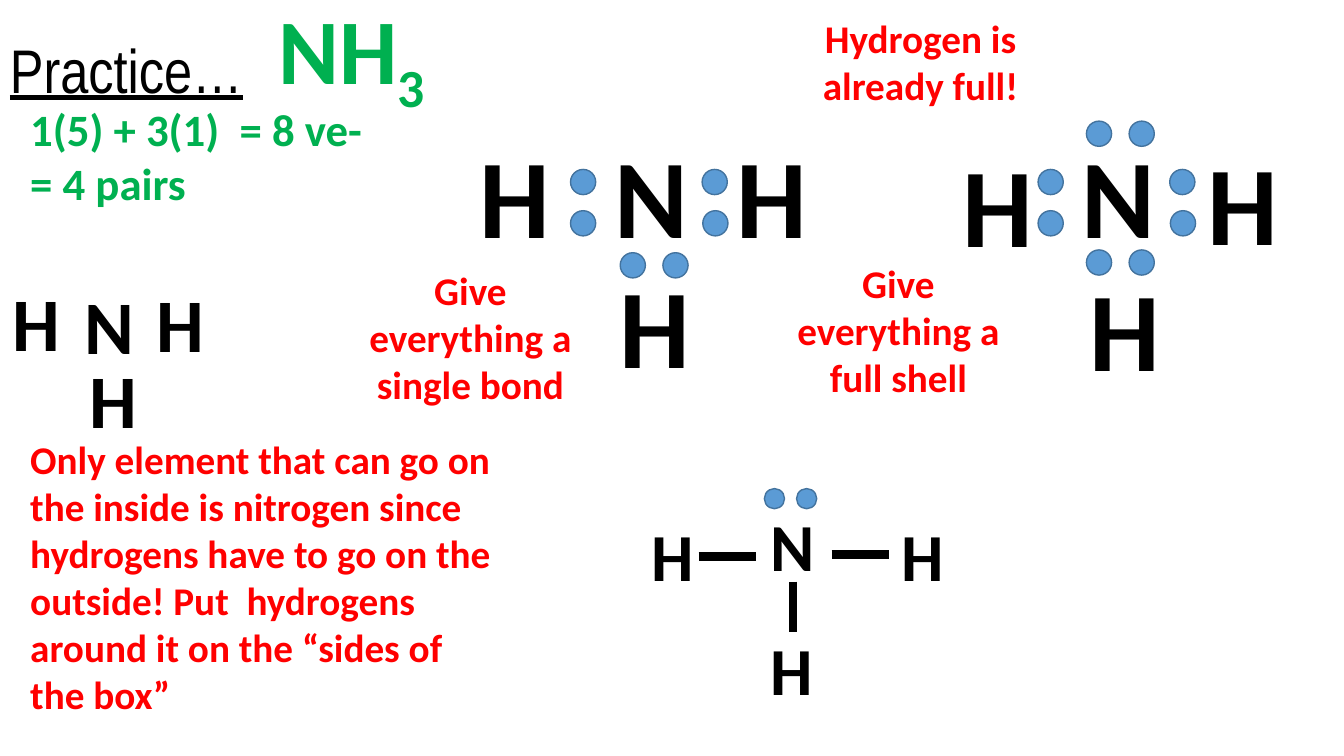
from pptx import Presentation, util as u
from pptx.dml.color import RGBColor
from pptx.enum import shapes, text
from pptx.oxml.ns import qn
from lxml import etree

COLOURS = {"black": "000000", "green": "00B050", "red": "FF0000",
           "dot": "5B9BD5", "dot_edge": "43739E"}

# Each molecule: font size, box height, then (symbol, left, top)
MOLECULES = [
    (54, 72.7, [("H", 1.5, 193.5), ("N", 53.5, 196), ("H", 105, 194.5), ("H", 57, 248.5)]),
    (80, 104.5, [("H", 335.5, 87), ("N", 431.5, 87), ("H", 519, 87), ("H", 435.5, 180)]),
    (80, 104.5, [("H", 680.5, 93.5), ("N", 765.5, 87), ("H", 855.5, 91.5), ("H", 771, 182)]),
    (48, 65.5, [("H", 458, 363.5), ("N", 543.5, 356.5), ("H", 637, 363.5), ("H", 543.5, 445)]),
]
# Electron pairs: left, top, step across, step down, diameter
PAIRS = [
    (407.5, 121, 0, 29.5, 18), (501.5, 121, 0.5, 29.5, 18), (443, 180.5, 30.5, 0, 18),
    (741.5, 121, 0, 29.5, 18), (835.5, 121, 0.5, 29.5, 18),
    (776, 86.5, 30.5, 0, 18), (776, 178.5, 30.5, 0, 18),
    (546, 349, 23, 0, 14.4),
]
BONDS = [(499, 397.5, 540, 397.5), (594, 396, 635, 396), (566.5, 415.5, 566.5, 451.5)]
# Red notes: wording, left, top, width, height, alignment
NOTES = [
    ("Only element that can go on the inside is nitrogen since hydrogens have to go "
     "on the outside! Put  hydrogens around it on the “sides of the box”",
     14.5, 307.5, 350.5, 211, "LEFT"),
    ("Give everything a single bond", 253.5, 186.5, 165, 108.5, "CENTER"),
    ("Give everything a full shell", 545, 181.5, 193.5, 108.5, "CENTER"),
    ("Hydrogen is already full!", 574, 6.5, 167, 75, "CENTER"),
]


def rgb(name):
    return RGBColor.from_string(COLOURS[name])


def add_text(page, wording, left, top, width, height, size, colour,
             align="LEFT", **font):
    box = page.shapes.add_textbox(*map(u.Pt, (left, top, width, height)))
    box.text_frame.word_wrap = True
    box.text_frame.auto_size = text.MSO_AUTO_SIZE.SHAPE_TO_FIT_TEXT
    para = box.text_frame.paragraphs[0]
    para.text = wording
    para.alignment = getattr(text.PP_ALIGN, align)
    for span in para.runs:
        style_span(span, size, colour, **font)
    return box


def style_span(span, size, colour, **font):
    values = {"name": "Calibri", "bold": True, "size": u.Pt(size), **font}
    for key, value in values.items():
        setattr(span.font, key, value)
    span.font.color.rgb = rgb(colour)


def add_title(page):
    box = add_text(page, "Practice…", 0, 0, 894, 104.5, 44, "black",
                   name="Arial Narrow", bold=False, underline=True)
    frame = box.text_frame
    frame.auto_size = text.MSO_AUTO_SIZE.NONE
    frame.vertical_anchor = text.MSO_ANCHOR.MIDDLE
    frame.paragraphs[0].line_spacing = 0.9


def add_formula(page):
    box = add_text(page, "NH", 192, -9.5, 251.5, 87, 66, "green")
    span = box.text_frame.paragraphs[0].add_run()
    span.text = "3"
    style_span(span, 66, "green")
    span._r.get_or_add_rPr().set("baseline", "-25000")


def add_pair(page, left, top, across, down, size):
    for step in range(2):
        dot = page.shapes.add_shape(
            shapes.MSO_SHAPE.OVAL, u.Pt(left + step * across),
            u.Pt(top + step * down), u.Pt(size), u.Pt(size))
        dot.shadow.inherit = False
        dot.fill.solid()
        dot.fill.fore_color.rgb = rgb("dot")
        dot.line.color.rgb = rgb("dot_edge")
        dot.line.width = u.Pt(1)


def add_bond(page, *ends):
    bond = page.shapes.add_connector(shapes.MSO_CONNECTOR.STRAIGHT, *map(u.Pt, ends))
    bond.line.color.rgb = rgb("black")
    bond.line.width = u.Pt(6)
    etree.SubElement(bond._element.spPr, qn("a:effectLst"))


def main():
    deck = Presentation()
    deck.slide_width, deck.slide_height = u.Pt(960), u.Pt(540)
    page = deck.slides.add_slide(deck.slide_layouts[6])

    # Heading and electron count
    add_title(page)
    add_formula(page)
    add_text(page, "1(5) + 3(1)  = 8 ve- \v= 4 pairs", 14.5, 69, 440.5, 85, 32, "green")

    # Explanations
    for wording, left, top, width, height, align in NOTES:
        add_text(page, wording, left, top, width, height, 28, "red", align)

    # Atoms, electrons and bonds
    for size, height, atoms in MOLECULES:
        for symbol, left, top in atoms:
            add_text(page, symbol, left, top, 96, height, size, "black")
    for pair in PAIRS:
        add_pair(page, *pair)
    for bond in BONDS:
        add_bond(page, *bond)

    deck.save("out.pptx")


if __name__ == "__main__":
    main()
